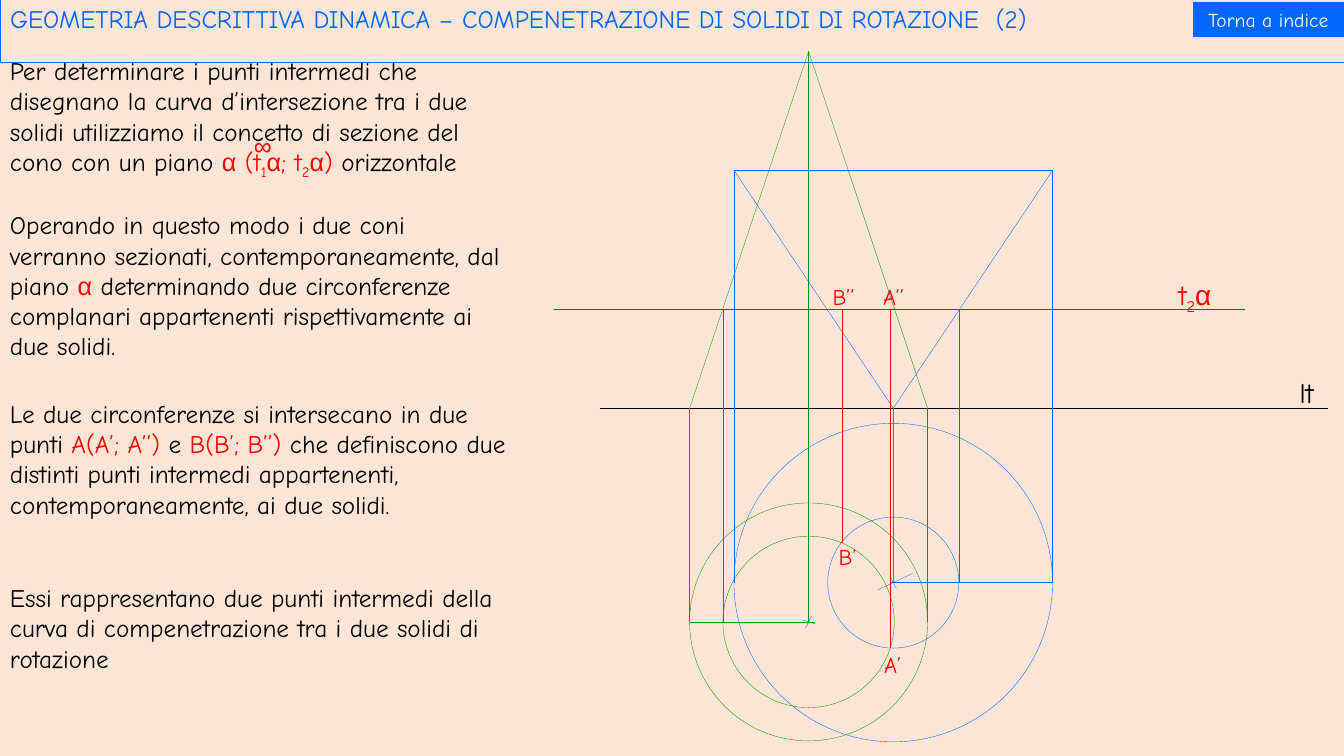
from lxml.etree import SubElement
from pptx import Presentation
from pptx.dml.color import RGBColor
from pptx.enum.shapes import MSO_CONNECTOR, MSO_SHAPE
from pptx.enum.text import MSO_ANCHOR as Anchor, MSO_AUTO_SIZE as AutoSize, PP_ALIGN as Align
from pptx.oxml.ns import qn
from pptx.util import Inches, Pt

CREAM = RGBColor(0xFB, 0xE5, 0xD6)
BLUE = RGBColor(0x00, 0x66, 0xFF)
STEEL = RGBColor(0x44, 0x72, 0xC4)
GREEN = RGBColor(0x00, 0x99, 0x00)
RED = RGBColor(0xFF, 0x00, 0x00)
BLACK = RGBColor(0x00, 0x00, 0x00)
WHITE = RGBColor(0xFF, 0xFF, 0xFF)
HAIRLINE = Pt(0.25)

PLANE_TEXT = [
    ("Per determinare i punti intermedi che disegnano la curva d’intersezione tra i due solidi "
     "utilizziamo il concetto di sezione del cono con un piano ", BLACK),
    ("α", RED), (" (t", RED), ("1", RED), ("α", RED), ("; t", RED), ("2", RED), ("α", RED),
    (") ", RED), ("orizzontale", BLACK)]
SECTION_TEXT = [
    ("Operando in questo modo i due coni verranno sezionati, contemporaneamente, dal piano ", BLACK),
    ("α", RED),
    (" determinando due circonferenze complanari appartenenti rispettivamente ai due solidi.", BLACK)]
POINTS_TEXT = [
    ("Le due circonferenze si intersecano in due punti ", BLACK), ("A(A’; A’’) ", RED),
    ("e ", BLACK), ("B(B’; B’’) ", RED),
    ("che definiscono due distinti punti intermedi appartenenti, contemporaneamente, ai due solidi.",
     BLACK)]
CURVE_TEXT = [
    ("Essi rappresentano due punti intermedi della curva di compenetrazione tra i due solidi di "
     "rotazione", BLACK)]


def set_attributes(target, formats):
    """Set each attribute of the target from a dict of values."""
    for name, value in formats.items():
        setattr(target, name, value)


def write_runs(paragraph, runs, size):
    """Write coloured runs, with Greek in Arial and lone digits as subscripts."""
    for text, colour in runs:
        run = paragraph.add_run()
        run.text = text
        set_attributes(run.font, {"size": Pt(size), "name": "Arial" if text in "α∞" else "Comic Neue"})
        run.font.color.rgb = colour
        if text.isdigit():
            run._r.get_or_add_rPr().set("baseline", "-25000")


def add_text(shapes, box, runs, size=18):
    """Add a wrapping text box."""
    frame = shapes.add_textbox(*map(Inches, box)).text_frame
    set_attributes(frame, {"word_wrap": True, "auto_size": AutoSize.SHAPE_TO_FIT_TEXT})
    write_runs(frame.paragraphs[0], runs, size)


def set_outline(shape, colour):
    """Give a shape or connector a hairline outline."""
    shape.line.color.rgb = colour
    shape.line.width = HAIRLINE


def add_line(shapes, start, end, colour):
    """Add a hairline between two points."""
    line = shapes.add_connector(MSO_CONNECTOR.STRAIGHT, *map(Inches, (*start, *end)))
    set_outline(line, colour)
    SubElement(line._element.spPr, qn("a:effectLst"))


def add_circle(shapes, centre, radius, colour, rotation=0):
    """Add an unfilled circle around a centre."""
    x, y = centre
    circle = shapes.add_shape(
        MSO_SHAPE.OVAL, *map(Inches, (x - radius, y - radius, 2 * radius, 2 * radius)))
    circle.rotation = rotation
    circle.shadow.inherit = False
    circle.fill.background()
    set_outline(circle, colour)


def add_header(slide, left, top, width, height):
    """Add the outlined title and the index button."""
    title = slide.shapes.title
    set_attributes(title, {"left": Inches(left), "top": Inches(top),
                           "width": Inches(width), "height": Inches(height)})
    set_outline(title, BLUE)
    set_attributes(title.text_frame, {"vertical_anchor": Anchor.MIDDLE, "word_wrap": True,
                                      "auto_size": AutoSize.SHAPE_TO_FIT_TEXT})
    paragraph = title.text_frame.paragraphs[0]
    set_attributes(paragraph, {"alignment": Align.LEFT, "line_spacing": 0.9})
    write_runs(paragraph, [
        ("GEOMETRIA DESCRITTIVA DINAMICA – COMPENETRAZIONE DI SOLIDI DI ROTAZIONE  (2)", BLUE)], 18)

    button = slide.shapes.add_shape(
        MSO_SHAPE.ACTION_BUTTON_CUSTOM, *map(Inches, (left + width - 1.5, top - 0.01, 1.5, height)))
    button.shadow.inherit = False
    button.fill.solid()
    button.fill.fore_color.rgb = BLUE
    button.line.fill.background()
    button.text_frame.vertical_anchor = Anchor.MIDDLE
    paragraph = button.text_frame.paragraphs[0]
    paragraph.alignment = Align.CENTER
    write_runs(paragraph, [("Torna a indice", WHITE)], 14)


def add_explanation(slide, left, top, width):
    """Add the four paragraphs of the explanation."""
    group = slide.shapes.add_group_shape()
    add_text(group.shapes, (left, top, width, 1.31), PLANE_TEXT)
    add_text(group.shapes, (left + 2.42, top + 0.74, 0.37, 0.31), [("∞", RED)])
    for offset, height, runs in ((1.53, 1.62, SECTION_TEXT), (3.4, 1.62, POINTS_TEXT),
                                 (5.23, 1.01, CURVE_TEXT)):
        add_text(slide.shapes, (left, top + offset, width, height), runs)


def add_projection(slide, left, top):
    """Draw both cones in elevation and plan, cut by the horizontal plane."""
    shapes = slide.shapes
    ground, trace, rim = top + 3.54, top + 2.56, top + 1.18
    green_x, green_y, green_radius, green_cut = left + 2.53, top + 5.66, 1.18, 0.85
    blue_x, blue_y, blue_radius, blue_cut = left + 3.37, top + 5.27, 1.58, 0.65
    green_left, green_right = green_x - green_radius, green_x + green_radius
    blue_left, blue_right = blue_x - blue_radius, blue_x + blue_radius
    a_x, b_x = left + 3.34, left + 2.86

    add_circle(shapes, (green_x, green_y), green_radius, GREEN, 335)
    add_circle(shapes, (blue_x, blue_y), blue_radius, BLUE, 335)
    add_circle(shapes, (green_x, green_y), green_cut, GREEN)
    add_circle(shapes, (blue_x, blue_y), blue_cut, BLUE)

    for x, y, dx, dy in ((green_x, green_y, 0.06, 0.02), (green_x, green_y, 0.03, -0.06),
                         (blue_x, blue_y, 0.03, 0.06), (blue_x + 0.02, blue_y - 0.01, 0.17, -0.08)):
        add_line(shapes, (x - dx, y - dy), (x + dx, y + dy), STEEL)

    for start, end, colour in (
            ((left + 0.46, ground), (left + 7.68, ground), BLACK),
            ((green_x, green_y), (green_x, ground), GREEN),
            ((green_x, ground), (green_x, top), GREEN),
            ((green_left, ground), (green_x, top), GREEN),
            ((green_right, ground), (green_x, top), GREEN),
            ((green_left, ground), (green_left, green_y), GREEN),
            ((green_right, ground), (green_right, green_y), GREEN),
            ((green_left, green_y), (green_x + 0.06, green_y), GREEN),
            ((green_x - green_cut, trace), (green_x - green_cut, green_y), GREEN),
            ((blue_x, blue_y), (blue_x, ground), STEEL),
            ((blue_right, rim), (blue_left, rim), BLUE),
            ((blue_left, rim), (blue_x, ground), BLUE),
            ((blue_right, rim), (blue_x, ground), BLUE),
            ((blue_left, rim), (blue_left, blue_y), BLUE),
            ((blue_right, rim), (blue_right, blue_y), BLUE),
            ((a_x, blue_y), (blue_right, blue_y), BLUE),
            ((blue_x + blue_cut, trace), (blue_x + blue_cut, blue_y), BLUE),
            ((left, trace), (left + 6.86, trace), RED),
            ((b_x, trace), (b_x, top + 4.88), RED),
            ((a_x, trace), (a_x, top + 5.92), RED)):
        add_line(shapes, start, end, colour)

    for x, y, width, text in ((2.67, 2.25, 0.43, "B’’"), (2.73, 4.83, 0.43, "B’"),
                              (3.17, 2.25, 0.47, "A’’"), (3.18, 5.9, 0.43, "A’")):
        add_text(shapes, (left + x, top + y, width, 0.37), [(text, RED)], 16)
    add_text(shapes, (left + 6.1, top + 2.19, 0.62, 0.44), [("t", RED), ("2", RED), ("α", RED)], 20)
    add_text(shapes, (left + 7.3, top + 3.17, 0.42, 0.44), [("lt", BLACK)], 20)


def main():
    """Build and save the slide."""
    presentation = Presentation()
    set_attributes(presentation, {"slide_width": Inches(13.33), "slide_height": Inches(7.5)})
    slide = presentation.slides.add_slide(presentation.slide_layouts[5])
    slide.background.fill.solid()
    slide.background.fill.fore_color.rgb = CREAM
    add_projection(slide, 5.49, 0.51)
    add_header(slide, 0, 0.03, 13.33, 0.35)
    add_explanation(slide, 0, 0.5, 5.12)
    presentation.save("out.pptx")


if __name__ == "__main__":
    main()
